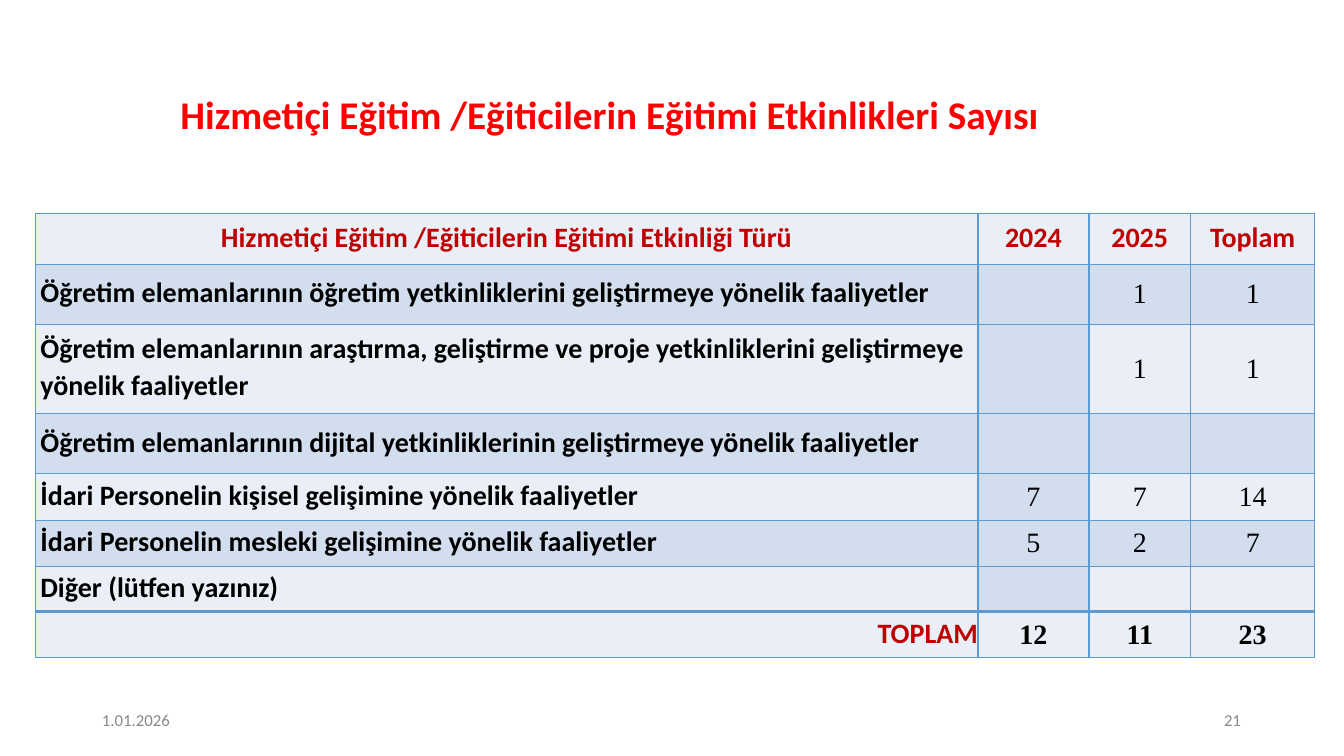
"""Build the slide counting in-service training activities by type and year."""
from lxml import etree
from pptx import Presentation
from pptx.dml.color import RGBColor
from pptx.enum.text import MSO_ANCHOR as Anchor, PP_ALIGN as Align
from pptx.oxml.ns import qn
from pptx.util import Inches, Pt

BORDER, RED, BLACK, GREY = "5B9BD4", "C00000", "000000", "888888"
LIGHT, DARK = "EAEEF7", "D2DEEE"


def color(value):
    return RGBColor.from_string(value)


def write(frame, text, align=Align.LEFT, **formats):
    para = frame.paragraphs[0]
    para.alignment = align
    span = para.add_run()
    span.text = text
    span.font.color.rgb = color(formats.pop("ink"))
    for name, value in formats.items():
        setattr(span.font, name, value)
    return para


deck = Presentation()
deck.slide_width, deck.slide_height = Inches(13.33), Inches(7.5)
page = deck.slides.add_slide(deck.slide_layouts[6])

title_format = dict(size=Pt(28), bold=True, name="Calibri", ink="FF0000")
footer_format = dict(size=Pt(12), bold=False, name="Calibri", ink=GREY)
texts = [
    ("Hizmetiçi Eğitim /Eğiticilerin Eğitimi Etkinlikleri Sayısı",
     (0.36, 0.65, 11.42, 1.04), (1.43, 0.25), title_format),
    ("1.01.2026", (1, 7.07, 0.71, 0.2), (0.01, 0), footer_format),
    ("21", (12.1, 7.07, 0.27, 0.2), (0.04, 0), footer_format),
]
for text, place, (left, top), formats in texts:
    frame = page.shapes.add_textbox(*map(Inches, place)).text_frame
    frame.word_wrap = True
    frame.margin_left, frame.margin_top = Inches(left), Inches(top)
    frame.margin_right = frame.margin_bottom = 0
    para = write(frame, text, **formats)
    if formats is footer_format:
        para.line_spacing = Pt(12.4)

widths = [9.35, 1.1, 1.01, 1.23]
rows = [
    (0.5, 0.07, ["Hizmetiçi Eğitim /Eğiticilerin Eğitimi Etkinliği Türü", "2024", "2025", "Toplam"]),
    (0.6, 0.12, ["Öğretim elemanlarının öğretim yetkinliklerini geliştirmeye yönelik faaliyetler", "", "1", "1"]),
    (0.88, 0.05, ["Öğretim elemanlarının araştırma, geliştirme ve proje yetkinliklerini geliştirmeye "
                  "yönelik faaliyetler", "", "1", "1"]),
    (0.6, 0.12, ["Öğretim elemanlarının dijital yetkinliklerinin geliştirmeye yönelik faaliyetler", "", "", ""]),
    (0.46, 0.05, ["İdari Personelin kişisel gelişimine yönelik faaliyetler", "7", "7", "14"]),
    (0.46, 0.05, ["İdari Personelin mesleki gelişimine yönelik faaliyetler", "5", "2", "7"]),
    (0.45, 0.04, ["Diğer (lütfen yazınız)", "", "", ""]),
    (0.45, 0.05, ["TOPLAM", "12", "11", "23"]),
]
total = len(rows) - 1
table = page.shapes.add_table(len(rows), len(widths), Inches(0.35), Inches(2.12),
                              Inches(sum(widths)), Inches(4.41)).table
for column, width in zip(table.columns, widths):
    column.width = Inches(width)

for r, (height, top, values) in enumerate(rows):
    table.rows[r].height = Inches(height)
    for c, text in enumerate(values):
        cell = table.cell(r, c)
        cell.margin_left = cell.margin_right = cell.margin_top = cell.margin_bottom = 0
        cell.fill.solid()
        shaded = r % 2 == 1 or c == 1 and r > 0
        cell.fill.fore_color.rgb = color(DARK if shaded and r < total else LIGHT)

        heading, label = r == 0, c == 0
        align = Align.CENTER
        if label and not heading:
            align = Align.RIGHT if r == total else Align.LEFT
        if heading or label:
            cell.margin_top = Inches(top)
        else:
            cell.vertical_anchor = Anchor.MIDDLE
        if align == Align.LEFT:
            cell.margin_left = Inches(0.05)
        if text:
            para = write(cell.text_frame, text, align, size=Pt(20),
                         name="Calibri" if heading or label else "Times New Roman",
                         bold=heading or label or r == total,
                         ink=RED if heading or label and r == total else BLACK)
            if r == 2 and label:
                para.line_spacing = 1.07

        heavy = {total - 1: "lnB", total: "lnT"}.get(r)
        properties = cell._tc.get_or_add_tcPr()
        for position, side in enumerate(["lnL", "lnR", "lnT", "lnB"]):
            line = etree.Element(qn(f"a:{side}"), w=str(Pt(2.25 if side == heavy else 1)))
            solid = etree.SubElement(line, qn("a:solidFill"))
            etree.SubElement(solid, qn("a:srgbClr"), val=BORDER)
            properties.insert(position, line)

deck.save("out.pptx")
